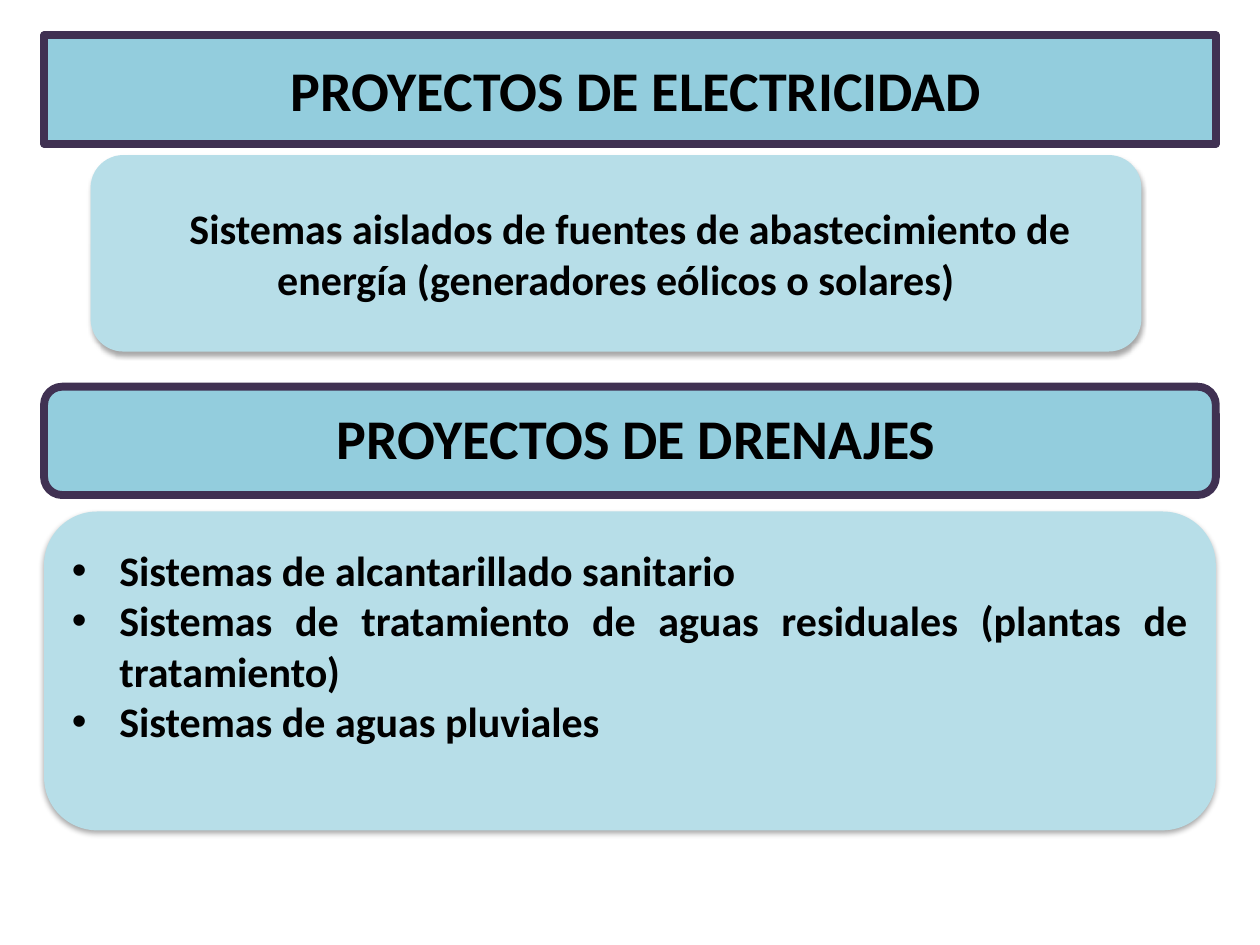
from lxml import etree
from pptx import Presentation
from pptx import util as u
from pptx.dml.color import RGBColor
from pptx.enum import shapes, text
from pptx.oxml import ns

COLORS = {"header": "93CDDD", "border": "403152", "panel": "B7DEE8", "ink": "000000"}
LEFT, WIDTH, HEADER_HEIGHT = 25.2, 669.6, 61.9
INSET = 7.2


def set_values(target, values):
    for name, value in values.items():
        setattr(target, name, value)


def add_xml(parent, tag, **attributes):
    return etree.SubElement(parent, ns.qn(tag), attributes)


class SlideBuilder:
    font = "Calibri"
    header_size = 32
    body_size = 24

    def __init__(self, deck):
        self.page = deck.slides.add_slide(deck.slide_layouts[5])

    def place(self, box, left, top, width, height):
        set_values(box, {"left": u.Pt(left), "top": u.Pt(top),
                         "width": u.Pt(width), "height": u.Pt(height)})

    def rounded(self):
        box = self.page.shapes.add_shape(
            shapes.MSO_SHAPE.ROUNDED_RECTANGLE, 0, 0, 0, 0)
        box.shadow.inherit = False
        return box

    def fill(self, box, color):
        box.fill.solid()
        box.fill.fore_color.rgb = RGBColor.from_string(COLORS[color])

    def set_text(self, box, lines, size, align, **frame_format):
        frame = box.text_frame
        set_values(frame, {"word_wrap": True, "auto_size": text.MSO_AUTO_SIZE.NONE,
                           "vertical_anchor": text.MSO_ANCHOR.MIDDLE, **frame_format})
        for index, line in enumerate(lines):
            para = frame.add_paragraph() if index else frame.paragraphs[0]
            para.alignment = align
            span = para.add_run()
            span.text = line
            set_values(span.font, {"name": self.font, "size": u.Pt(size), "bold": True})
            span.font.color.rgb = RGBColor.from_string(COLORS["ink"])
        return frame.paragraphs

    def header(self, box, top, line, spacing=1.0):
        self.place(box, LEFT, top, WIDTH, HEADER_HEIGHT)
        self.fill(box, "header")
        box.line.color.rgb = RGBColor.from_string(COLORS["border"])
        box.line.width = u.Pt(4.5)
        paras = self.set_text(box, [line], self.header_size, text.PP_ALIGN.CENTER,
                              margin_left=u.Pt(2 * INSET))
        paras[0].line_spacing = spacing

    def title(self, top, line):
        self.header(self.page.shapes.title, top, line)

    def subtitle(self, top, line):
        self.header(self.rounded(), top, line, 0.9)

    def panel(self, left, top, width, height):
        box = self.rounded()
        self.place(box, left, top, width, height)
        self.fill(box, "panel")
        box.line.fill.background()
        effects = box._element.spPr.find(ns.qn("a:effectLst"))
        shadow = add_xml(effects, "a:outerShdw", blurRad=str(u.Pt(3.1)),
                         dist=str(u.Pt(1.8)), dir="5400000", rotWithShape="0")
        color = add_xml(shadow, "a:srgbClr", val=COLORS["ink"])
        add_xml(color, "a:alpha", val="35000")
        return box

    def statement(self, place, line, indent):
        paras = self.set_text(self.panel(*place), [line], self.body_size,
                              text.PP_ALIGN.CENTER)
        paras[0]._p.get_or_add_pPr().set("indent", str(u.Pt(indent)))

    def bullets(self, place, lines, indent, bottom):
        paras = self.set_text(self.panel(*place), lines, self.body_size,
                              text.PP_ALIGN.JUSTIFY, margin_bottom=u.Pt(bottom))
        for para in paras:
            properties = para._p.get_or_add_pPr()
            properties.set("marL", str(u.Pt(indent)))
            properties.set("indent", str(-u.Pt(indent)))
            add_xml(properties, "a:buFont", typeface="Arial")
            add_xml(properties, "a:buChar", char="•")


def main():
    deck = Presentation()
    set_values(deck, {"slide_width": u.Pt(720), "slide_height": u.Pt(540)})
    slide = SlideBuilder(deck)
    slide.title(20.2, "PROYECTOS DE ELECTRICIDAD")
    slide.statement(
        (51.8, 88.6, 600.5, 112.3),
        "Sistemas aislados de fuentes de abastecimiento de energía "
        "(generadores eólicos o solares)", indent=16)
    slide.subtitle(221, "PROYECTOS DE DRENAJES")
    slide.bullets(
        (LEFT, 292.3, WIDTH, 182.2),
        ["Sistemas de alcantarillado sanitario",
         "Sistemas de tratamiento de aguas residuales (plantas de tratamiento)",
         "Sistemas de aguas pluviales"], indent=27, bottom=33)
    deck.save("out.pptx")


if __name__ == "__main__":
    main()
